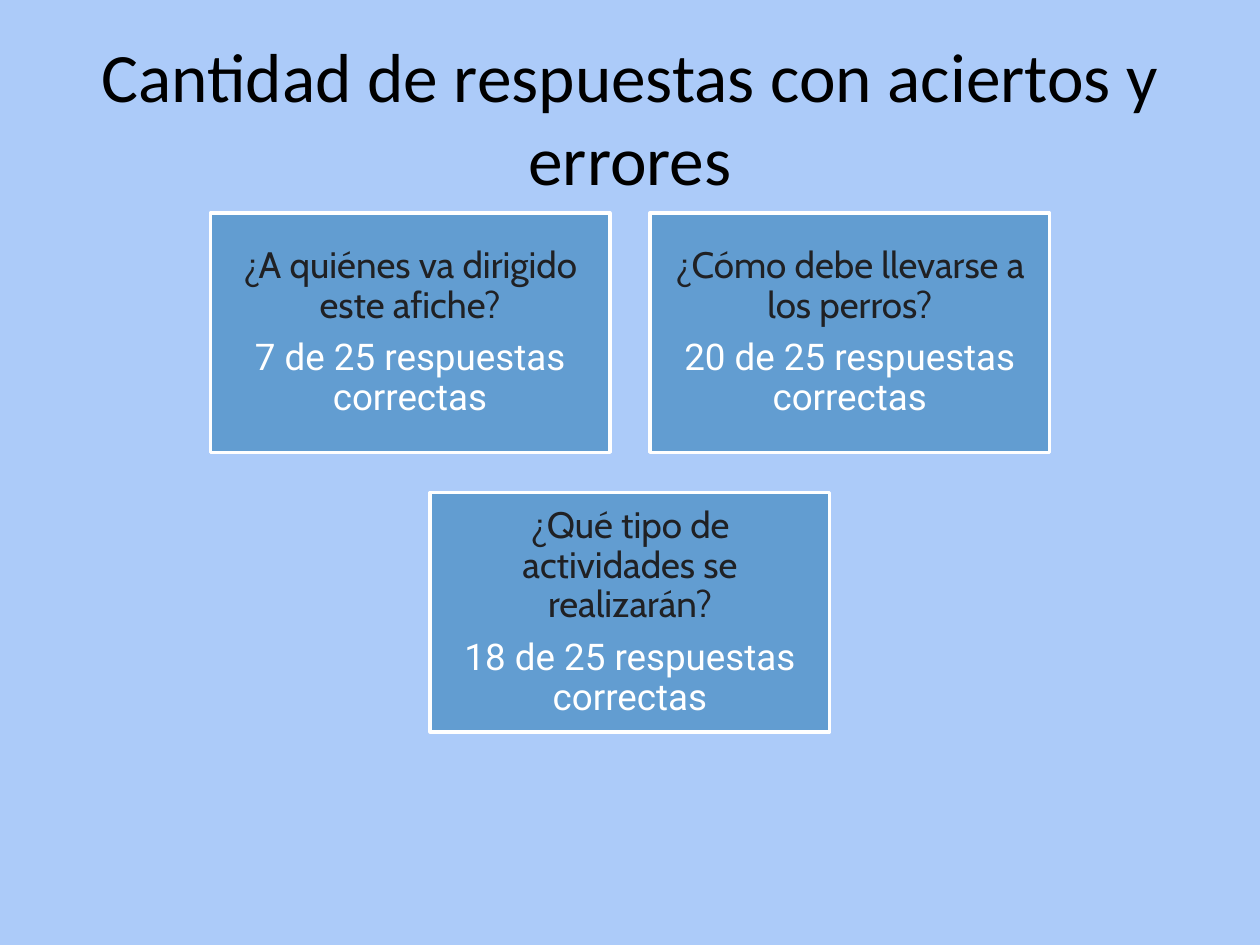
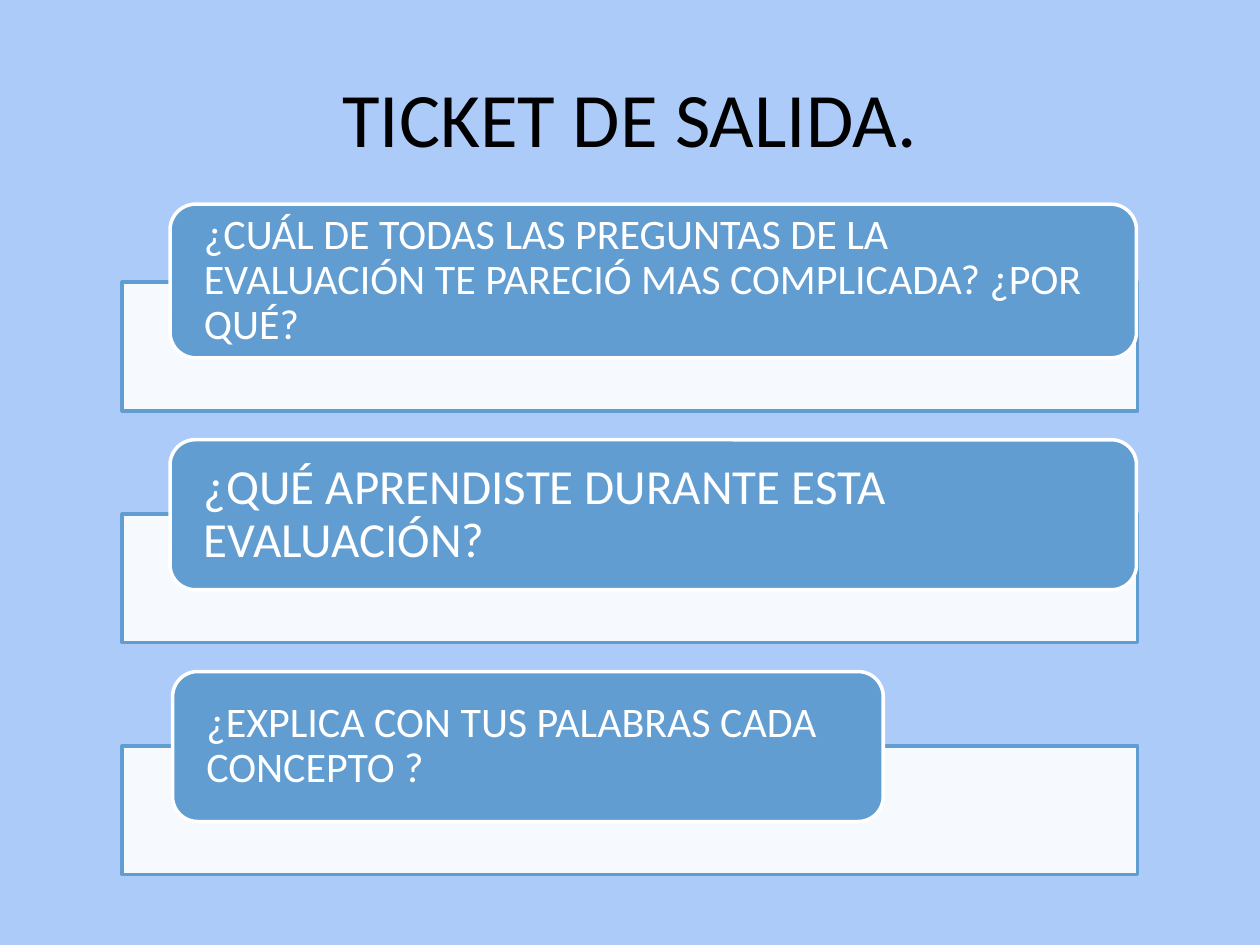
from dataclasses import dataclass

from lxml import etree
from pptx import Presentation
from pptx import util as u
from pptx.dml.color import RGBColor
from pptx.enum import shapes, text
from pptx.oxml import ns


@dataclass(frozen=True)
class Theme:
    background: str = "ACCBF9"
    accent: str = "629DD1"
    light: str = "FFFFFF"
    dark: str = "202124"
    title: str = "000000"
    title_font: str = "Calibri"
    question_font: str = "Cabin"
    answer_font: str = "Roboto"
    result_size: float = 21
    line_width: float = 2
    line_spacing: float = 0.9


theme = Theme()
CENTER, LEFT = text.PP_ALIGN.CENTER, text.PP_ALIGN.LEFT
RECTANGLE = shapes.MSO_SHAPE.RECTANGLE
ROUNDED = shapes.MSO_SHAPE.ROUNDED_RECTANGLE


def add_box(slide, kind, left, top, width, height, fill, line):
    """Add a shadowless filled shape; sizes are in inches."""
    shape = slide.shapes.add_shape(kind, *map(u.Inches, (left, top, width, height)))
    shape.shadow.inherit = False
    shape.fill.solid()
    shape.fill.fore_color.rgb = RGBColor.from_string(fill)
    shape.line.color.rgb = RGBColor.from_string(line)
    shape.line.width = u.Pt(theme.line_width)
    return shape


def write(shape, lines, insets, alignment, **paragraph_format):
    """Fill a shape with lines of (words, font, size, colour)."""
    frame = shape.text_frame
    horizontal, vertical = map(u.Inches, insets)
    frame_format = {
        "word_wrap": True, "vertical_anchor": text.MSO_ANCHOR.MIDDLE,
        "margin_left": horizontal, "margin_right": horizontal,
        "margin_top": vertical, "margin_bottom": vertical,
    }
    for name, value in frame_format.items():
        setattr(frame, name, value)
    for index, (words, font, size, color) in enumerate(lines):
        paragraph = frame.add_paragraph() if index else frame.paragraphs[0]
        for name, value in {"alignment": alignment, **paragraph_format}.items():
            setattr(paragraph, name, value)
        if index:
            paragraph.space_before = u.Pt(0.35 * size)
        run = paragraph.add_run()
        run.text = words
        for name, value in {"name": font, "size": u.Pt(size)}.items():
            setattr(run.font, name, value)
        run.font.color.rgb = RGBColor.from_string(color)


presentation = Presentation()
presentation.slide_width, presentation.slide_height = u.Inches(10), u.Inches(7.5)

# Background and title of each slide
slides = []
for title, size in [
    ("Cantidad de respuestas con aciertos y errores", 39.6),
    ("TICKET DE SALIDA.", 44),
]:
    slide = presentation.slides.add_slide(presentation.slide_layouts[6])
    slide.background.fill.solid()
    slide.background.fill.fore_color.rgb = RGBColor.from_string(theme.background)
    title_box = slide.shapes.add_textbox(*map(u.Inches, (0.5, 0.3, 9, 1.25)))
    write(title_box, [(title, theme.title_font, size, theme.title)], (0.1, 0.05), CENTER)
    slides.append(slide)
results_slide, ticket_slide = slides

# Results: two cards above, one centred below
card_width, card_height, card_gap = 3.17, 1.9, 0.32
for column, row, question, correct in [
    (0, 0, "¿A quiénes va dirigido este afiche?", 7),
    (1, 0, "¿Cómo debe llevarse a los perros?", 20),
    (0.5, 1, "¿Qué tipo de actividades se realizarán?", 18),
]:
    card = add_box(
        results_slide, RECTANGLE,
        1.67 + column * (card_width + card_gap), 1.69 + row * (card_height + card_gap),
        card_width, card_height, theme.accent, theme.light,
    )
    write(card, [
        (question, theme.question_font, theme.result_size, theme.dark),
        (f"{correct} de 25 respuestas correctas", theme.answer_font,
         theme.result_size, theme.light),
    ], (0.09, 0.09), CENTER, line_spacing=theme.line_spacing)

# Exit ticket: each question overlaps the top of its answer panel
panel_left, panel_width, panel_height = 0.97, 8.06, 1.02
first_panel, row_pitch, overlap = 2.24, 1.84, 0.6
for row, (question, size, left, width, height) in enumerate([
    ("¿CUÁL DE TODAS LAS PREGUNTAS DE LA EVALUACIÓN TE PARECIÓ MAS COMPLICADA? "
     "¿POR QUÉ?", 24, 1.35, 7.67, 1.22),
    ("¿QUÉ APRENDISTE DURANTE ESTA EVALUACIÓN?", 28, 1.35, 7.67, 1.19),
    ("¿EXPLICA CON TUS PALABRAS CADA CONCEPTO ?", 24, 1.37, 5.64, 1.19),
]):
    panel_top = first_panel + row * row_pitch
    panel = add_box(ticket_slide, RECTANGLE, panel_left, panel_top,
                    panel_width, panel_height, theme.light, theme.accent)
    panel_color = panel.fill._xPr.find(ns.qn("a:solidFill"))[0]
    etree.SubElement(panel_color, ns.qn("a:alpha"), val="90000")
    label = add_box(ticket_slide, ROUNDED, left, panel_top + overlap - height,
                    width, height, theme.accent, theme.light)
    write(label, [(question, theme.title_font, size, theme.light)],
          (0.21, 0), LEFT, line_spacing=theme.line_spacing)

presentation.save("out.pptx")
